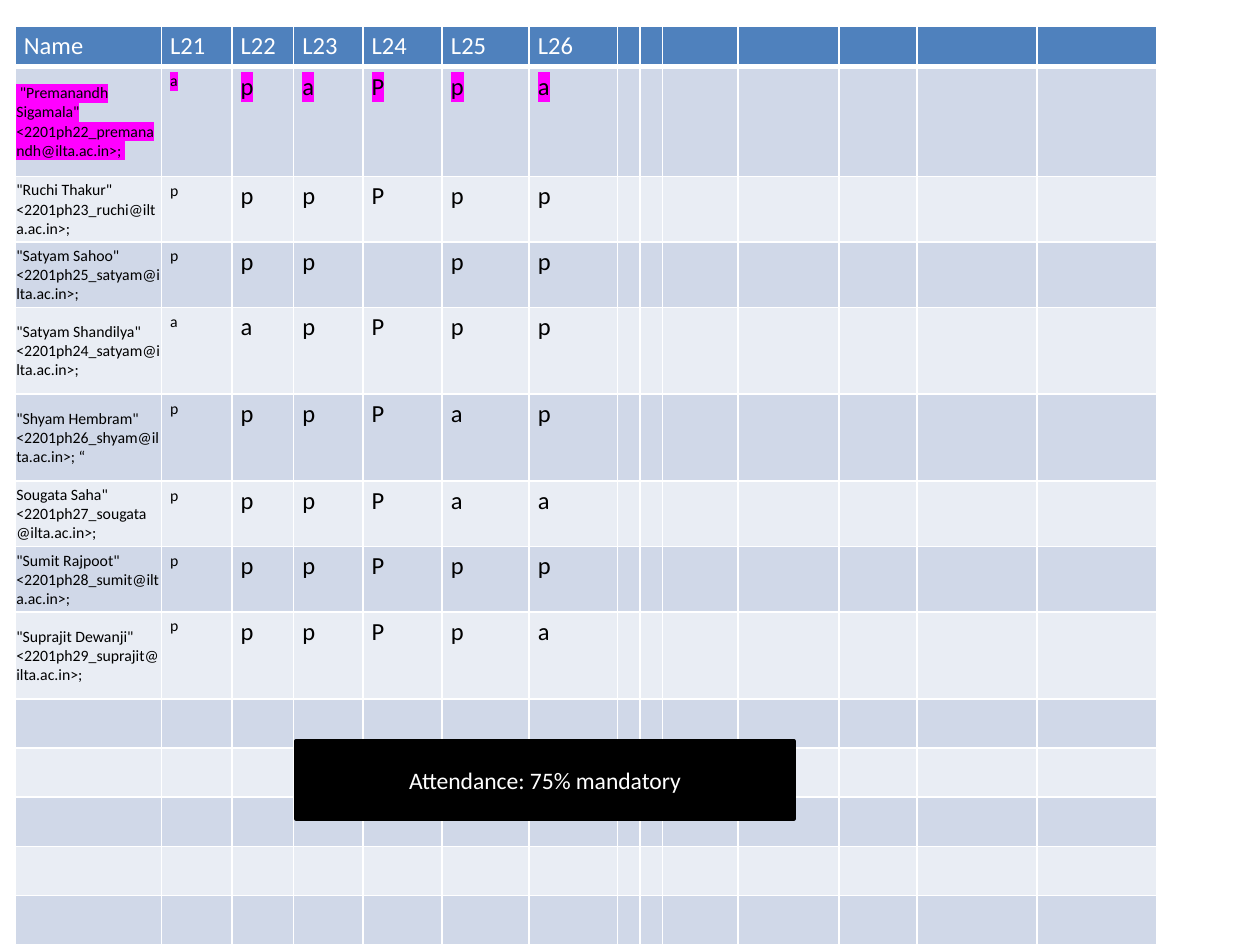
from lxml import etree
from pptx import Presentation
from pptx.dml.color import RGBColor
from pptx.enum import shapes, text
from pptx.oxml import ns
from pptx.util import Inches, Pt

COLORS = {
    "header": "4F81BD", "odd": "D0D8E8", "even": "E9EDF4",
    "white": "FFFFFF", "black": "000000", "highlight": "FF00FF",
}
FONT = "Calibri"
COLUMN_WIDTHS = [1.16, 0.56, 0.49, 0.55, 0.63, 0.69, 0.7,
                 0.18, 0.18, 0.6, 0.8, 0.62, 0.95, 0.95]
ROW_HEIGHTS = [0.32, 0.87, 0.52, 0.52, 0.69, 0.69, 0.52, 0.52, 0.69] + [0.39] * 5
HEADERS = ["Name", "L21", "L22", "L23", "L24", "L25", "L26"]
STUDENTS = [
    (' "Premanandh Sigamala" <2201ph22_premanandh@ilta.ac.in>; ', "apaPpa"),
    ('"Ruchi Thakur" <2201ph23_ruchi@ilta.ac.in>;', "pppPpp"),
    ('"Satyam Sahoo" <2201ph25_satyam@ilta.ac.in>;', "ppp pp"),
    ('"Satyam Shandilya" <2201ph24_satyam@ilta.ac.in>;', "aapPpp"),
    ('"Shyam Hembram" <2201ph26_shyam@ilta.ac.in>; “', "pppPap"),
    ('Sougata Saha" <2201ph27_sougata@ilta.ac.in>;', "pppPaa"),
    ('"Sumit Rajpoot" <2201ph28_sumit@ilta.ac.in>;', "pppPpp"),
    ('"Suprajit Dewanji" <2201ph29_suprajit@ilta.ac.in>;', "pppPpa"),
]
HIGHLIGHTED_ROW = 1


def color(name):
    """Return the named colour."""
    return RGBColor.from_string(COLORS[name])


def style_run(run, size, color_name, highlighted=False):
    """Set a run's font and optional highlight."""
    run.font.name = FONT
    run.font.size = Pt(size)
    run.font.color.rgb = color(color_name)
    if highlighted:
        highlight = etree.Element(ns.qn("a:highlight"))
        etree.SubElement(highlight, ns.qn("a:srgbClr"), val=COLORS["highlight"])
        run.font._element.find(ns.qn("a:solidFill")).addnext(highlight)


def set_borders(cell, bottom):
    """Draw white borders around a cell."""
    properties = cell._tc.get_or_add_tcPr()
    for side, width in (("L", 1), ("R", 1), ("T", 1), ("B", bottom)):
        line = etree.SubElement(properties, ns.qn(f"a:ln{side}"), w=str(Pt(width)))
        fill = etree.SubElement(line, ns.qn("a:solidFill"))
        etree.SubElement(fill, ns.qn("a:srgbClr"), val=COLORS["white"])


def fill_cell(cell, content, row, column):
    """Format one cell according to its row and column."""
    is_header = row == 0
    is_name = column == 0 and 0 < row <= len(STUDENTS)
    set_borders(cell, 3 if is_header else 1)
    cell.fill.solid()
    cell.fill.fore_color.rgb = color("header" if is_header else "odd" if row % 2 else "even")
    side, top, bottom = (0.01, 0.01, 0) if is_name else (0.07, 0.04, 0.04)
    cell.margin_left = cell.margin_right = Inches(side)
    cell.margin_top, cell.margin_bottom = Inches(top), Inches(bottom)
    if is_name:
        cell.vertical_anchor = text.MSO_ANCHOR.MIDDLE
    paragraph = cell.text_frame.paragraphs[0]
    if not content:
        etree.SubElement(paragraph._p, ns.qn("a:endParaRPr"), sz="1400")
        return
    paragraph.text = content
    size = 9 if not is_header and column < 2 else 14
    style_run(paragraph.runs[0], size, "white" if is_header else "black",
              row == HIGHLIGHTED_ROW)


def add_attendance_table(slide, left, top):
    """Place the attendance table with its top left corner given."""
    table = slide.shapes.add_table(
        len(ROW_HEIGHTS), len(COLUMN_WIDTHS), Inches(left), Inches(top),
        Inches(sum(COLUMN_WIDTHS)), Inches(sum(ROW_HEIGHTS))).table
    table.first_row = table.horz_banding = False
    for column, width in zip(table.columns, COLUMN_WIDTHS):
        column.width = Inches(width)
    for row, height in zip(table.rows, ROW_HEIGHTS):
        row.height = Inches(height)
    records = [HEADERS] + [[name, *marks] for name, marks in STUDENTS]
    for row in range(len(ROW_HEIGHTS)):
        record = records[row] if row < len(records) else []
        for column in range(len(COLUMN_WIDTHS)):
            content = record[column] if column < len(record) else ""
            fill_cell(table.cell(row, column), content if content.strip() else "", row, column)


def add_notice(slide, left, top, width, height):
    """Place the black attendance notice in the given box."""
    notice = slide.shapes.add_shape(
        shapes.MSO_SHAPE.RECTANGLE, Inches(left), Inches(top), Inches(width), Inches(height))
    notice.shadow.inherit = False
    notice.fill.solid()
    notice.fill.fore_color.rgb = color("black")
    notice.line.color.rgb = color("black")
    notice.line.width = Pt(2)
    notice.text_frame.word_wrap = True
    notice.text_frame.vertical_anchor = text.MSO_ANCHOR.MIDDLE
    paragraph = notice.text_frame.paragraphs[0]
    paragraph.text = "Attendance: 75% mandatory"
    paragraph.alignment = text.PP_ALIGN.CENTER
    style_run(paragraph.runs[0], 13.5, "white")


def main():
    """Build and save the attendance slide."""
    presentation = Presentation()
    presentation.slide_width, presentation.slide_height = Inches(10), Inches(7.5)
    slide = presentation.slides.add_slide(presentation.slide_layouts[6])
    add_attendance_table(slide, 0.12, 0.21)
    add_notice(slide, 2.35, 5.88, 3.95, 0.62)
    presentation.save("out.pptx")


if __name__ == "__main__":
    main()
